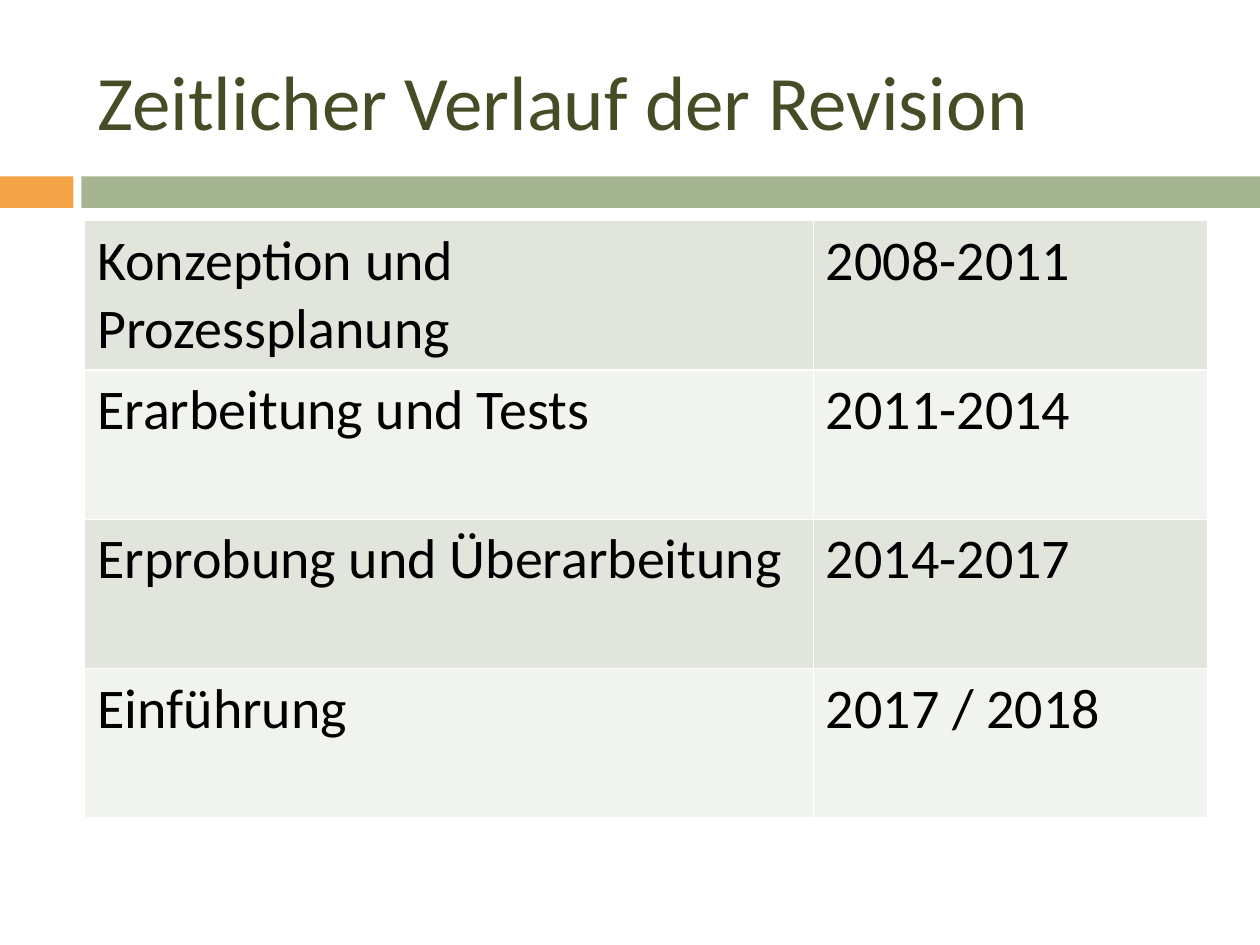
import dataclasses

import lxml.etree
import pptx
import pptx.dml.color
import pptx.enum.shapes
import pptx.enum.text
import pptx.oxml.ns
import pptx.util

Pt = pptx.util.Pt


@dataclasses.dataclass(frozen=True)
class Theme:
    font: str = "Calibri"
    title_size: float = 44
    table_size: float = 32
    title_color: str = "444D26"
    text_color: str = "000000"
    accent: str = "F3A447"
    band: str = "A5B592"
    rows: tuple = ("E1E5DC", "F0F3EE")
    border: str = "FFFFFF"
    border_width: float = 1


class SlideBuilder:
    def __init__(self, slide, theme):
        self.slide = slide
        self.theme = theme

    def color(self, value):
        return pptx.dml.color.RGBColor.from_string(value)

    def place(self, shape, left, top, width, height):
        shape.left, shape.top = Pt(left), Pt(top)
        shape.width, shape.height = Pt(width), Pt(height)

    def add_text(self, frame, text, size, color):
        paragraph = frame.paragraphs[0]
        paragraph.alignment = pptx.enum.text.PP_ALIGN.LEFT
        run = paragraph.add_run()
        run.text = text
        run.font.name = self.theme.font
        run.font.size = Pt(size)
        run.font.color.rgb = self.color(color)

    def title(self, text, *box):
        heading = self.slide.shapes.title
        self.place(heading, *box)
        frame = heading.text_frame
        frame.auto_size = pptx.enum.text.MSO_AUTO_SIZE.NONE
        frame.vertical_anchor = pptx.enum.text.MSO_ANCHOR.MIDDLE
        self.add_text(frame, text, self.theme.title_size, self.theme.title_color)

    def bar(self, fill, *box):
        bar = self.slide.shapes.add_shape(
            pptx.enum.shapes.MSO_SHAPE.RECTANGLE, *map(Pt, box)
        )
        bar.shadow.inherit = False
        bar.fill.solid()
        bar.fill.fore_color.rgb = self.color(fill)
        bar.line.fill.background()

    def cell_borders(self, cell):
        qn = pptx.oxml.ns.qn
        properties = cell._tc.get_or_add_tcPr()
        for side in ("lnL", "lnR", "lnT", "lnB"):
            line = lxml.etree.SubElement(
                properties, qn(f"a:{side}"), w=str(Pt(self.theme.border_width))
            )
            fill = lxml.etree.SubElement(line, qn("a:solidFill"))
            lxml.etree.SubElement(fill, qn("a:srgbClr"), val=self.theme.border)

    def table(self, entries, left, top, column_widths, row_height):
        table = self.slide.shapes.add_table(
            len(entries), len(column_widths), Pt(left), Pt(top),
            Pt(sum(column_widths)), Pt(row_height * len(entries)),
        ).table
        table.first_row = False
        for column, width in zip(table.columns, column_widths):
            column.width = Pt(width)
        for index, (row, texts) in enumerate(zip(table.rows, entries)):
            row.height = Pt(row_height)
            for cell, text in zip(row.cells, texts):
                self.cell_borders(cell)
                cell.fill.solid()
                cell.fill.fore_color.rgb = self.color(self.theme.rows[index % 2])
                self.add_text(
                    cell.text_frame, text, self.theme.table_size, self.theme.text_color
                )


def main():
    presentation = pptx.Presentation()
    presentation.slide_width, presentation.slide_height = Pt(720), Pt(540)
    slide = presentation.slides.add_slide(presentation.slide_layouts[5])
    theme = Theme()
    builder = SlideBuilder(slide, theme)

    builder.bar(theme.accent, 0, 100.8, 42, 18)
    builder.bar(theme.band, 46.5, 100.8, 673.5, 18)
    builder.title("Zeitlicher Verlauf der Revision", 48.4, 18, 642, 78)

    phases = [
        ("Konzeption und Prozessplanung", "2008-2011"),
        ("Erarbeitung und Tests", "2011-2014"),
        ("Erprobung und Überarbeitung", "2014-2017"),
        ("Einführung", "2017 / 2018"),
    ]
    builder.table(phases, 48.4, 126, (416.4, 225.2), 85.3)

    presentation.save("out.pptx")


if __name__ == "__main__":
    main()
